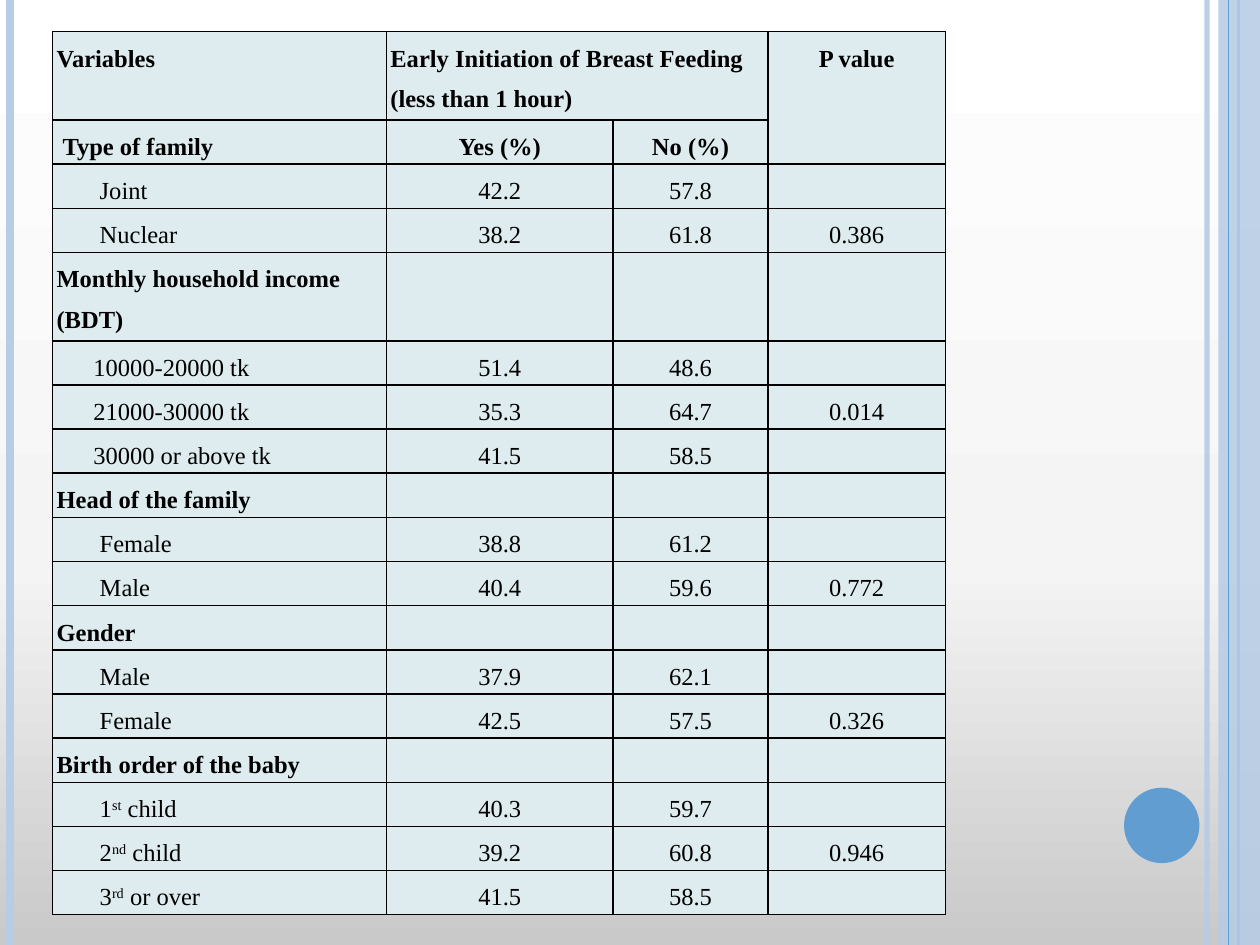
from copy import deepcopy

from lxml.etree import SubElement
from pptx import Presentation
from pptx.dml.color import RGBColor
from pptx.enum.shapes import MSO_CONNECTOR, MSO_SHAPE
from pptx.enum.text import PP_ALIGN
from pptx.oxml.ns import qn
from pptx.util import Cm, Pt

COLORS = {
    "text": "000000", "border": "000000", "cell": "DEECEF",
    "pale": "B7CCE5", "accent": "629DD1",
}
BACKGROUND_STOPS = [(0, "C9C9C9"), (0.4, "F4F4F4"), (1, "FFFFFF")]
SLIDE_WIDTH, SLIDE_HEIGHT = 25.4, 19.05

# x in cm, colour, width in points, opacity in percent
EDGE_LINES = [
    (24.33, "pale", 3, 93),
    (0.2, "pale", 4.5, 100),
    (24.97, "accent", 1.5, 100),
    (24.77, "accent", 0.75, 100),
]

HEADING = ("Variables", "Early Initiation of Breast Feeding (less than 1 hour)", "P value")
SUBHEADING = ("Type of family", "Yes (%)", "No (%)")
# group title, indent of its rows in cm, rows; ^ marks superscript
GROUPS = [
    (None, 0.87, [("Joint", "42.2", "57.8", ""), ("Nuclear", "38.2", "61.8", "0.386")]),
    ("Monthly household income (BDT)", 0.74, [
        ("10000-20000 tk", "51.4", "48.6", ""),
        ("21000-30000 tk", "35.3", "64.7", "0.014"),
        ("30000 or above tk", "41.5", "58.5", ""),
    ]),
    ("Head of the family", 0.87, [
        ("Female", "38.8", "61.2", ""), ("Male", "40.4", "59.6", "0.772")]),
    ("Gender", 0.87, [("Male", "37.9", "62.1", ""), ("Female", "42.5", "57.5", "0.326")]),
    ("Birth order of the baby", 0.87, [
        ("1^st^ child", "40.3", "59.7", ""),
        ("2^nd^ child", "39.2", "60.8", "0.946"),
        ("3^rd^ or over", "41.5", "58.5", ""),
    ]),
]
TABLE_LEFT, TABLE_TOP = 1.06, 0.64
COLUMN_WIDTHS = [6.73, 4.57, 3.12, 3.58]
ROW_HEIGHT = 0.89
TWO_LINE_TEXTS = {"Variables", "Monthly household income (BDT)"}


def color(name):
    return RGBColor.from_string(COLORS[name])


def set_opacity(element, percent):
    if percent < 100:
        rgb = element.find(".//" + qn("a:srgbClr"))
        SubElement(rgb, qn("a:alpha"), val=str(percent * 1000))


def paint_background(slide):
    fill = slide.background.fill
    fill.gradient()
    fill.gradient_angle = 90
    stop_list = slide.element.find(".//" + qn("a:gsLst"))
    stop_list.append(deepcopy(stop_list[-1]))
    for stop, (position, rgb) in zip(fill.gradient_stops, BACKGROUND_STOPS):
        stop.position = position
        stop.color.rgb = RGBColor.from_string(rgb)


def add_edge_line(slide, x, name, width, opacity):
    edge = slide.shapes.add_connector(
        MSO_CONNECTOR.STRAIGHT, Cm(x), 0, Cm(x), Cm(SLIDE_HEIGHT))
    edge.line.color.rgb = color(name)
    edge.line.width = Pt(width)
    properties = edge.element.spPr
    set_opacity(properties, opacity)
    SubElement(properties, qn("a:effectLst"))


def add_plain_shape(slide, kind, box, name, opacity=100):
    shape = slide.shapes.add_shape(kind, *[Cm(length) for length in box])
    shape.shadow.inherit = False
    shape.fill.solid()
    shape.fill.fore_color.rgb = color(name)
    shape.line.fill.background()
    set_opacity(shape.element.spPr, opacity)


def write_text(cell, text, bold=False, align=PP_ALIGN.LEFT, indent=0):
    """Fill one cell; every second part between ^ signs is superscript."""
    paragraph = cell.text_frame.paragraphs[0]
    paragraph.alignment = align
    paragraph.line_spacing = 1.5
    if indent:
        properties = paragraph._p.get_or_add_pPr()
        properties.set("marL", str(Cm(indent)))
        properties.set("indent", "0")
    for index, part in enumerate(text.split("^")):
        run = paragraph.add_run()
        run.text = part
        run.font.name = "Times New Roman"
        run.font.size = Pt(14)
        run.font.bold = bold
        run.font.color.rgb = color("text")
        if index % 2:
            run._r.get_or_add_rPr().set("baseline", "30000")


def style_cell(cell):
    cell.margin_left = cell.margin_right = Cm(0.08)
    cell.margin_top = cell.margin_bottom = 0
    properties = cell._tc.get_or_add_tcPr()
    for side in ("lnL", "lnR", "lnT", "lnB"):
        border = SubElement(properties, qn("a:" + side), w=str(Pt(1)))
        fill = SubElement(border, qn("a:solidFill"))
        SubElement(fill, qn("a:srgbClr"), val=COLORS["border"])
    cell.fill.solid()
    cell.fill.fore_color.rgb = color("cell")


def table_rows():
    """Return (texts, bold, indent of the first column) for each row."""
    heading, feeding, p_value = HEADING
    rows = [((heading, feeding, "", p_value), True, 0), ((*SUBHEADING, ""), True, 0.12)]
    for title, indent, entries in GROUPS:
        if title:
            rows.append(((title, "", "", ""), True, 0))
        rows += [(entry, False, indent) for entry in entries]
    return rows


def add_feeding_table(slide):
    rows = table_rows()
    table = slide.shapes.add_table(
        len(rows), len(COLUMN_WIDTHS), Cm(TABLE_LEFT), Cm(TABLE_TOP),
        Cm(sum(COLUMN_WIDTHS)), Cm(ROW_HEIGHT * len(rows))).table
    table.first_row = table.horz_banding = False
    for column, width in zip(table.columns, COLUMN_WIDTHS):
        column.width = Cm(width)
    for r, (texts, bold, indent) in enumerate(rows):
        lines = 2 if texts[0] in TWO_LINE_TEXTS else 1
        table.rows[r].height = Cm(ROW_HEIGHT * lines)
        for c, text in enumerate(texts):
            cell = table.cell(r, c)
            style_cell(cell)
            if text:
                left = c == 0 or text == HEADING[1]
                write_text(cell, text, bold=bold, indent=0 if c else indent,
                           align=PP_ALIGN.LEFT if left else PP_ALIGN.CENTER)
    table.cell(0, 1).merge(table.cell(0, 2))
    table.cell(0, 3).merge(table.cell(1, 3))


def main():
    presentation = Presentation()
    presentation.slide_width, presentation.slide_height = Cm(SLIDE_WIDTH), Cm(SLIDE_HEIGHT)
    slide = presentation.slides.add_slide(presentation.slide_layouts[6])
    paint_background(slide)
    for edge in EDGE_LINES[:3]:
        add_edge_line(slide, *edge)
    add_plain_shape(slide, MSO_SHAPE.RECTANGLE, (24.56, 0, 0.84, SLIDE_HEIGHT), "pale", 87)
    add_edge_line(slide, *EDGE_LINES[3])
    add_plain_shape(slide, MSO_SHAPE.OVAL, (22.66, 15.88, 1.52, 1.52), "accent")
    add_feeding_table(slide)
    presentation.save("out.pptx")


if __name__ == "__main__":
    main()
